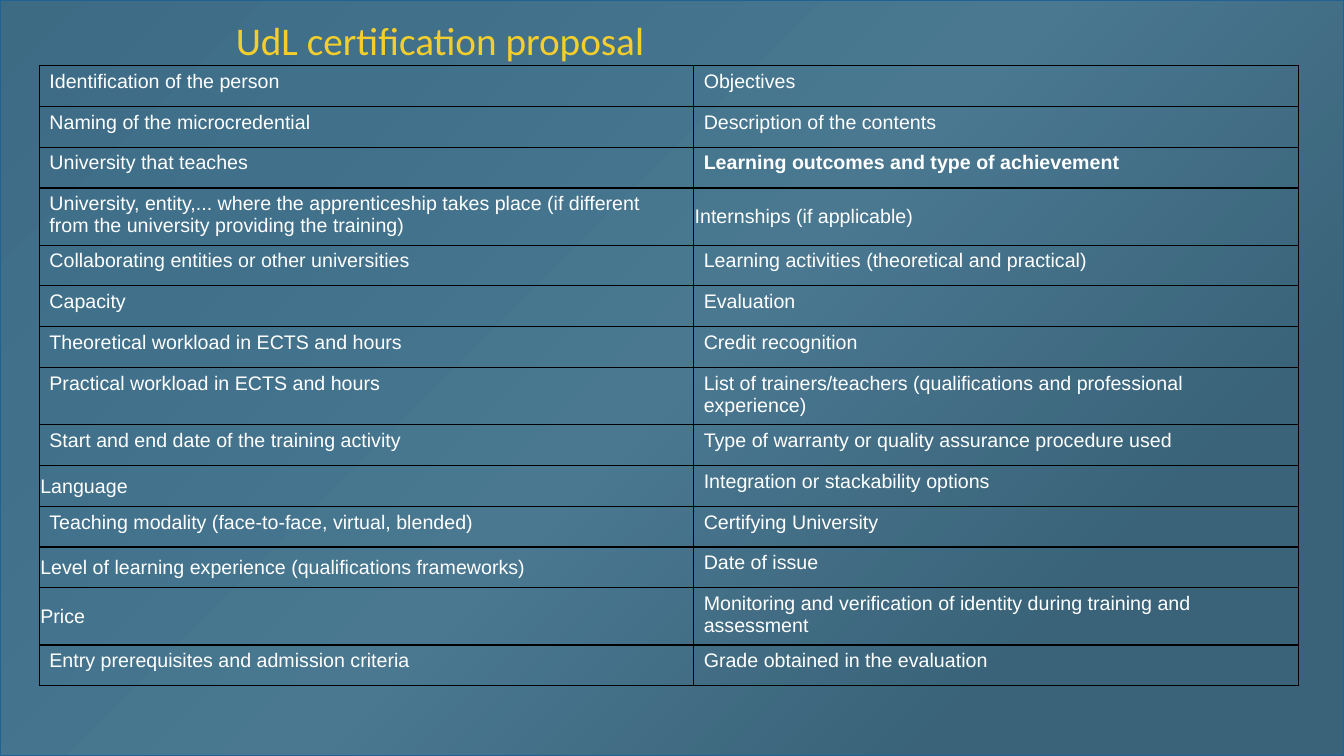
from dataclasses import dataclass

import lxml.etree
import pptx
import pptx.dml.color
import pptx.enum.shapes
import pptx.enum.text
import pptx.oxml
import pptx.oxml.ns
import pptx.util

Inches = pptx.util.Inches
Pt = pptx.util.Pt
RGB = pptx.dml.color.RGBColor.from_string
qn = pptx.oxml.ns.qn
Anchor = pptx.enum.text.MSO_ANCHOR


@dataclass(frozen=True)
class Theme:
    title_color: str = "F4CE2C"
    text_color: str = "FFFFFF"
    border_color: str = "000000"
    veil_color: str = "6193AD"
    veil_line: str = "226292"
    veil_opacity: int = 41
    gradient: tuple[tuple[int, str], ...] = (
        (0, "265068"), (21, "2A5872"), (50, "3A667E"), (80, "1F4255"), (99, "1F4255"))
    gradient_angle: int = 45
    title_font: str = "Calibri"
    body_font: str = "Arial"
    title_size: float = 28
    body_size: float = 14
    border_width: float = 1
    veil_line_width: float = 1.5


@dataclass(frozen=True)
class Item:
    text: str
    bold: bool = False
    tight: bool = False  # middle anchored, almost no margins


THEME = Theme()
SLIDE_W, SLIDE_H = Inches(13.33), Inches(7.5)
TABLE_LEFT, TABLE_TOP = Inches(0.39), Inches(0.65)
COL_WIDTHS = (Inches(6.49), Inches(6))
TABLE_HEIGHT = Inches(5.67)

ROWS: list[tuple[Item, Item]] = [
    (Item("Identification of the person"), Item("Objectives")),
    (Item("Naming of the microcredential"), Item("Description of the contents")),
    (Item("University that teaches"),
     Item("Learning outcomes and type of achievement", bold=True)),
    (Item("University, entity,... where the apprenticeship takes place "
          "(if different from the university providing the training)"),
     Item("Internships (if applicable)", tight=True)),
    (Item("Collaborating entities or other universities"),
     Item("Learning activities (theoretical and practical)")),
    (Item("Capacity"), Item("Evaluation")),
    (Item("Theoretical workload in ECTS and hours"), Item("Credit recognition")),
    (Item("Practical workload in ECTS and hours"),
     Item("List of trainers/teachers (qualifications and professional experience)")),
    (Item("Start and end date of the training activity"),
     Item("Type of warranty or quality assurance procedure used")),
    (Item("Language", tight=True), Item("Integration or stackability options")),
    (Item("Teaching modality (face-to-face, virtual, blended)"),
     Item("Certifying University")),
    (Item("Level of learning experience (qualifications frameworks)", tight=True),
     Item("Date of issue")),
    (Item("Price", tight=True),
     Item("Monitoring and verification of identity during training and assessment")),
    (Item("Entry prerequisites and admission criteria"),
     Item("Grade obtained in the evaluation")),
]


def write(tf, text: str, *, font: str, size: float, color: str, bold: bool = False) -> None:
    r = tf.paragraphs[0].add_run()
    r.text = text
    r.font.name = font
    r.font.size = Pt(size)
    r.font.bold = bold
    r.font.color.rgb = RGB(color)


def add_color(parent, color: str):
    return lxml.etree.SubElement(parent, qn("a:srgbClr"), val=color)


def paint_background(slide) -> None:
    fill = slide.background.fill
    fill.gradient()
    grad = slide.background._cSld.find(".//" + qn("a:gradFill"))
    stops = grad.find(qn("a:gsLst"))
    for stop in list(stops):
        stops.remove(stop)
    for position, color in THEME.gradient:
        gs = lxml.etree.SubElement(stops, qn("a:gs"), pos=str(position * 1000))
        add_color(gs, color)
    grad.find(qn("a:lin")).set("ang", str(THEME.gradient_angle * 60000))


def add_veil(slide) -> None:
    """Cover the whole slide with a translucent rectangle."""
    sp = slide.shapes.add_shape(
        pptx.enum.shapes.MSO_SHAPE.RECTANGLE, 0, 0, SLIDE_W, SLIDE_H)
    sp.shadow.inherit = False
    sp.fill.solid()
    sp.fill.fore_color.rgb = RGB(THEME.veil_color)
    color = sp._element.spPr.find(qn("a:solidFill")).find(qn("a:srgbClr"))
    lxml.etree.SubElement(color, qn("a:alpha"), val=str(THEME.veil_opacity * 1000))
    sp.line.color.rgb = RGB(THEME.veil_line)
    sp.line.width = Pt(THEME.veil_line_width)


def add_title(slide, text: str) -> None:
    sp = slide.shapes.add_textbox(Inches(2.24), Inches(0.11), Inches(8.62), Inches(0.78))
    tf = sp.text_frame
    tf.word_wrap = True
    tf.vertical_anchor = Anchor.TOP
    write(tf, text, font=THEME.title_font, size=THEME.title_size, color=THEME.title_color)


def add_borders(cell) -> None:
    tc_pr = cell._tc.get_or_add_tcPr()
    for side in ("L", "R", "T", "B"):
        ln = lxml.etree.SubElement(
            tc_pr, qn(f"a:ln{side}"), w=str(Pt(THEME.border_width)))
        add_color(lxml.etree.SubElement(ln, qn("a:solidFill")), THEME.border_color)


def fill_cell(cell, item: Item) -> None:
    add_borders(cell)
    cell.fill.background()
    if item.tight:
        cell.vertical_anchor = Anchor.MIDDLE
        cell.margin_left = cell.margin_right = cell.margin_top = Inches(0.01)
        cell.margin_bottom = 0
    write(cell.text_frame, item.text, font=THEME.body_font, size=THEME.body_size,
          color=THEME.text_color, bold=item.bold)


def add_items_table(slide, rows: list[tuple[Item, Item]]) -> None:
    table = slide.shapes.add_table(
        len(rows), len(COL_WIDTHS), TABLE_LEFT, TABLE_TOP,
        sum(COL_WIDTHS), TABLE_HEIGHT).table
    table.first_row = table.horz_banding = False
    for column, width in zip(table.columns, COL_WIDTHS):
        column.width = width
    for row, items in zip(table.rows, rows):
        for cell, item in zip(row.cells, items):
            fill_cell(cell, item)


def main() -> None:
    prs = pptx.Presentation()
    prs.slide_width, prs.slide_height = SLIDE_W, SLIDE_H
    slide = prs.slides.add_slide(prs.slide_layouts[6])
    paint_background(slide)
    add_veil(slide)
    add_title(slide, "UdL certification proposal")
    add_items_table(slide, ROWS)
    prs.save("out.pptx")


if __name__ == "__main__":
    main()
